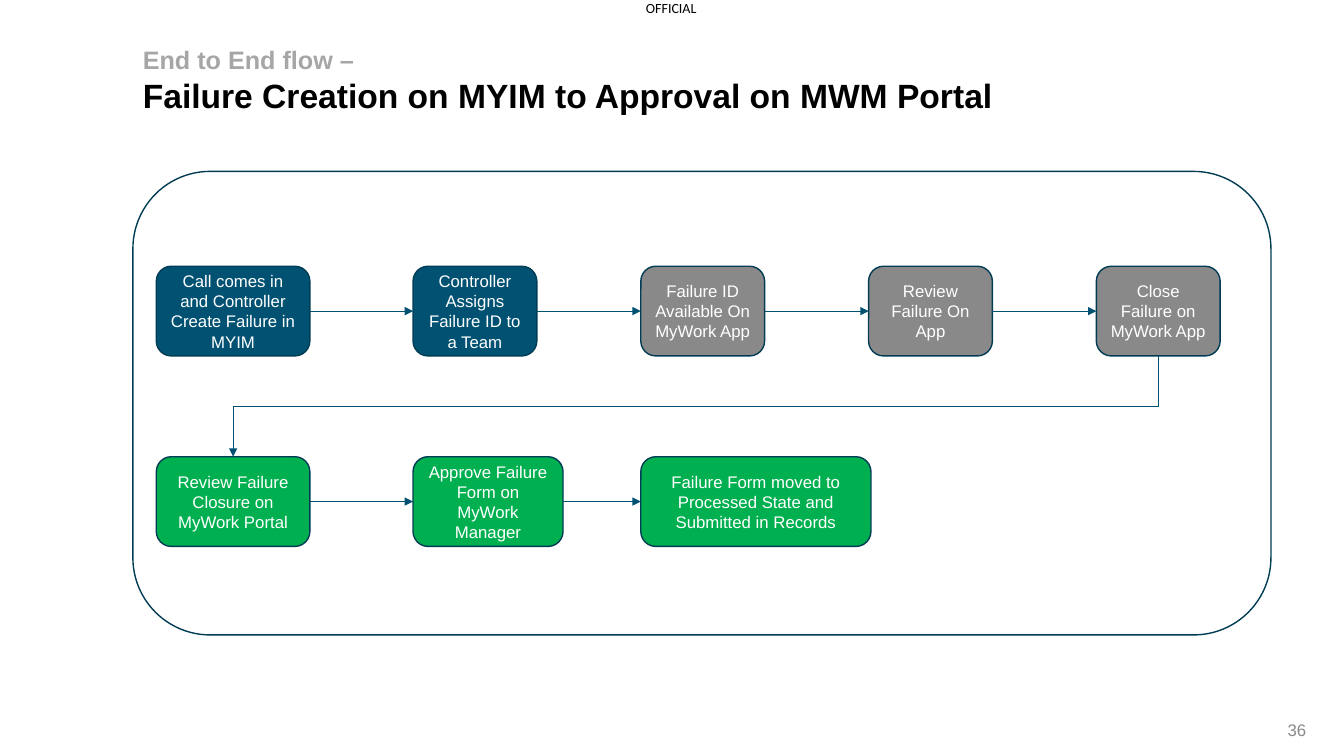
from lxml.etree import SubElement
from pptx import Presentation
from pptx.dml.color import RGBColor
from pptx.enum.shapes import MSO_CONNECTOR as CONN, MSO_SHAPE as SHAPE
from pptx.enum.text import MSO_ANCHOR as ANCHOR, PP_ALIGN as ALIGN
from pptx.oxml.ns import qn
from pptx.util import Cm, Pt

BLUE = RGBColor(0x00, 0x51, 0x72)
OUTLINE = RGBColor(0x00, 0x3C, 0x54)
GREY = RGBColor(0x89, 0x89, 0x89)
LIGHT_GREY = RGBColor(0xA6, 0xA6, 0xA6)
GREEN = RGBColor(0x00, 0xB0, 0x50)
BLACK = RGBColor(0, 0, 0)
WHITE = RGBColor(0xFF, 0xFF, 0xFF)

# Step grid, in centimetres
COLUMNS = [3.94] + [10.41 + 5.74 * i for i in range(4)]
STEP_HEIGHT = 2.26
TOP, BOTTOM, LEFT, RIGHT = 0, 2, 1, 3  # connection sites

# Each row: top, then (text, width, fill) per step
ROWS = [
    (6.71, [
        ("Call comes in and Controller Create Failure in MYIM", 3.87, BLUE),
        ("Controller Assigns Failure ID to a Team", 3.12, BLUE),
        ("Failure ID Available On MyWork App", 3.12, GREY),
        ("Review Failure On App", 3.12, GREY),
        ("Close Failure on MyWork App", 3.12, GREY),
    ]),
    (11.51, [
        ("Review Failure Closure on MyWork Portal", 3.87, GREEN),
        ("Approve Failure Form on MyWork Manager", 3.78, GREEN),
        ("Failure Form moved to Processed State and Submitted in Records", 5.8, GREEN),
    ]),
]


def style(p, size, color, font="Arial", bold=False, align=ALIGN.LEFT):
    p.alignment = align
    p.font.name, p.font.size, p.font.bold = font, Pt(size), bold
    p.font.color.rgb = color


def add_text(s, box, text, size, color, wrap=True, **fmt):
    tf = s.shapes.add_textbox(*map(Cm, box)).text_frame
    tf.word_wrap = wrap
    tf.text = text
    style(tf.paragraphs[0], size, color, **fmt)
    return tf


def add_round_box(s, box, fill=None):
    sp = s.shapes.add_shape(SHAPE.ROUNDED_RECTANGLE, *map(Cm, box))
    sp.shadow.inherit = False
    sp.line.color.rgb, sp.line.width = OUTLINE, Pt(1)
    if fill is None:
        sp.fill.background()
    else:
        sp.fill.solid()
        sp.fill.fore_color.rgb = fill
    return sp


def add_step(s, box, text, fill):
    sp = add_round_box(s, box, fill)
    tf = sp.text_frame
    tf.word_wrap, tf.vertical_anchor = True, ANCHOR.MIDDLE
    tf.text = text
    style(tf.paragraphs[0], 12, WHITE, align=ALIGN.CENTER)
    return sp


def add_arrow(s, start, end, kind=CONN.STRAIGHT, sites=(RIGHT, LEFT)):
    c = s.shapes.add_connector(kind, 0, 0, 0, 0)
    c.begin_connect(start, sites[0])
    c.end_connect(end, sites[1])
    c.line.color.rgb, c.line.width = BLUE, Pt(0.5)
    SubElement(c.line._get_or_add_ln(), qn("a:tailEnd"), type="triangle")
    SubElement(c._element.spPr, qn("a:effectLst"))
    return c


def turn_downward(c):
    """Rotate a right-to-left elbow so that it leaves and arrives vertically."""
    mid_x, mid_y = c.left + c.width // 2, c.top + c.height // 2
    c.width, c.height = c.height, c.width
    c.left, c.top = mid_x - c.width // 2, mid_y - c.height // 2
    xfrm = c._element.spPr.find(qn("a:xfrm"))
    xfrm.attrib.pop("flipH", None)
    xfrm.set("rot", "5400000")


def main():
    prs = Presentation()
    prs.slide_width, prs.slide_height = Cm(33.87), Cm(19.05)
    s = prs.slides.add_slide(prs.slide_layouts[6])

    # Classification label
    tf = add_text(s, (16.28, 0, 1.35, 0.43), "OFFICIAL", 10, BLACK, wrap=False, font="Calibri")
    tf.margin_left = tf.margin_right = tf.margin_top = tf.margin_bottom = 0

    # Panel, page number
    add_round_box(s, (3.35, 4.32, 28.68, 11.68))
    tf = add_text(s, (30.81, 18.14, 2.36, 0.51), "36", 12, GREY, align=ALIGN.RIGHT)
    tf.vertical_anchor = ANCHOR.MIDDLE

    # Steps, then arrows along each row
    rows = [[add_step(s, (x, top, width, STEP_HEIGHT), text, fill)
             for x, (text, width, fill) in zip(COLUMNS, steps)]
            for top, steps in ROWS]
    for row in rows:
        for start, end in zip(row, row[1:]):
            add_arrow(s, start, end)
    turn_downward(add_arrow(s, rows[0][-1], rows[1][0], CONN.ELBOW, (BOTTOM, TOP)))

    # Title
    tf = add_text(s, (3.35, 0.99, 25.17, 2.06), "End to End flow –", 18, LIGHT_GREY, bold=True)
    p = tf.add_paragraph()
    p.text = "Failure Creation on MYIM to Approval on MWM Portal"
    style(p, 24, BLACK, bold=True)

    prs.save("out.pptx")


if __name__ == "__main__":
    main()
